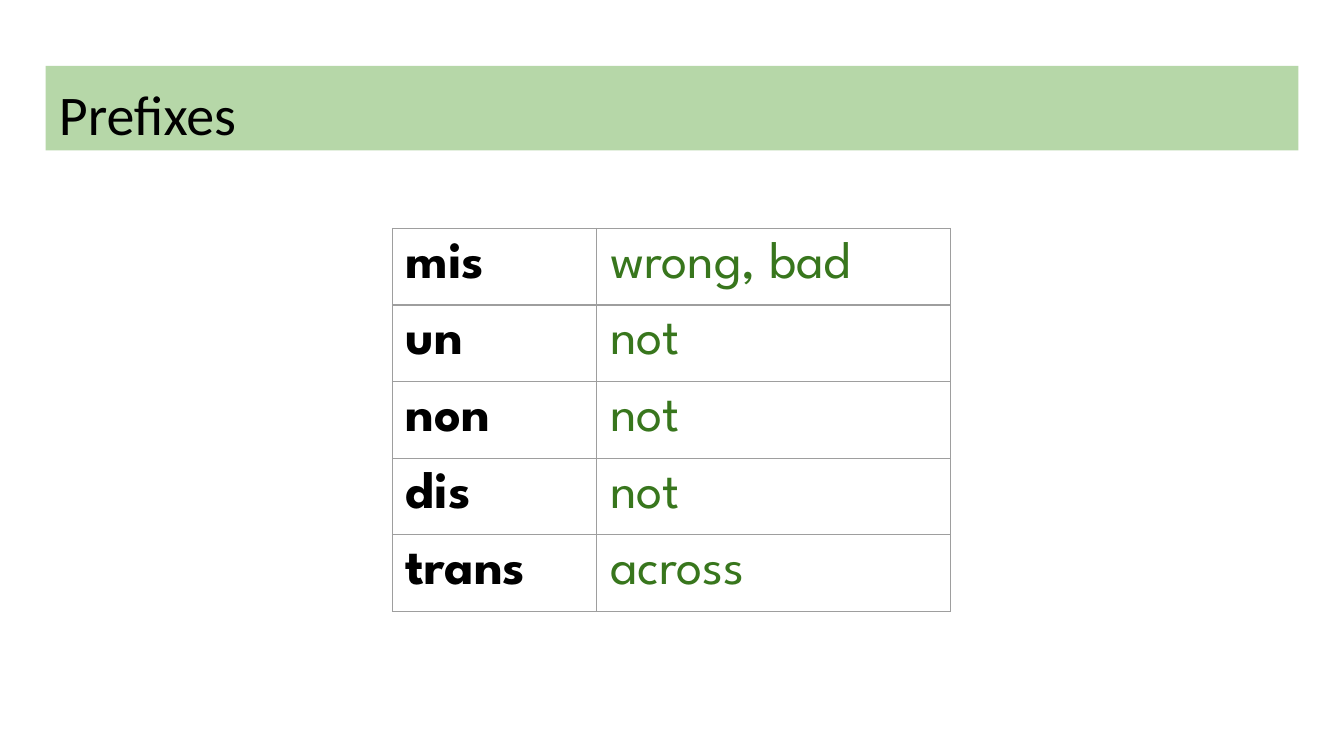
from lxml.etree import SubElement
from pptx import Presentation
from pptx.dml.color import RGBColor
from pptx.enum.shapes import MSO_SHAPE
from pptx.enum.text import MSO_ANCHOR, PP_ALIGN
from pptx.oxml.ns import qn
from pptx.util import Inches, Pt

BLACK = RGBColor(0x00, 0x00, 0x00)
PALE_GREEN = RGBColor(0xB6, 0xD7, 0xA8)
DARK_GREEN = RGBColor(0x38, 0x76, 0x1D)
GRID_GREY = RGBColor(0x9E, 0x9E, 0x9E)

PADDING = Inches(0.1)
COLUMN_WIDTHS = (1.52, 2.63)
ROW_HEIGHT = 0.57
PREFIXES = [
    ("mis", "wrong, bad"),
    ("un", "not"),
    ("non", "not"),
    ("dis", "not"),
    ("trans", "across"),
]


def set_padding(holder):
    """Give a text frame or table cell the same margin on all sides."""
    holder.margin_left = holder.margin_right = PADDING
    holder.margin_top = holder.margin_bottom = PADDING


def style_font(paragraph, name, size, color, bold=False):
    font = paragraph.font
    font.name = name
    font.size = Pt(size)
    font.bold = bold
    font.color.rgb = color


def add_borders(cell):
    """Draw a thin grey line on each side of a cell."""
    properties = cell._tc.get_or_add_tcPr()
    for position, side in enumerate(("lnL", "lnR", "lnT", "lnB")):
        line = SubElement(properties, qn(f"a:{side}"), w=str(Pt(0.75)))
        fill = SubElement(line, qn("a:solidFill"))
        SubElement(fill, qn("a:srgbClr"), val=str(GRID_GREY))
        properties.insert(position, line)


def add_title_band(slide, left, top, width, height):
    band = slide.shapes.add_shape(
        MSO_SHAPE.RECTANGLE, Inches(left), Inches(top), Inches(width), Inches(height)
    )
    band.shadow.inherit = False
    band.fill.solid()
    band.fill.fore_color.rgb = PALE_GREEN
    band.line.fill.background()

    frame = band.text_frame
    frame.word_wrap = True
    frame.vertical_anchor = MSO_ANCHOR.TOP
    set_padding(frame)
    title = frame.paragraphs[0]
    title.text = "Prefixes"
    title.alignment = PP_ALIGN.LEFT
    style_font(title, "Calibri", 30, BLACK)


def add_prefix_table(slide, left, top):
    table = slide.shapes.add_table(
        len(PREFIXES), len(COLUMN_WIDTHS), Inches(left), Inches(top),
        Inches(sum(COLUMN_WIDTHS)), Inches(ROW_HEIGHT * len(PREFIXES)),
    ).table
    table.first_row = False
    table.horz_banding = False
    for column, width in zip(table.columns, COLUMN_WIDTHS):
        column.width = Inches(width)

    for row, entry in zip(table.rows, PREFIXES):
        row.height = Inches(ROW_HEIGHT)
        for index, (cell, wording) in enumerate(zip(row.cells, entry)):
            is_prefix = index == 0
            cell.fill.background()
            add_borders(cell)
            set_padding(cell)
            cell.text = wording
            style_font(
                cell.text_frame.paragraphs[0], "League Spartan", 28,
                BLACK if is_prefix else DARK_GREEN, bold=is_prefix,
            )


def main():
    presentation = Presentation()
    # Widescreen 16:9
    presentation.slide_width = Inches(10)
    presentation.slide_height = Inches(10) * 9 // 16
    slide = presentation.slides.add_slide(presentation.slide_layouts[6])

    # Heading
    add_title_band(slide, 0.34, 0.49, 9.32, 0.63)
    # Prefixes and their meanings
    add_prefix_table(slide, 2.92, 1.7)

    presentation.save("out.pptx")


if __name__ == "__main__":
    main()
